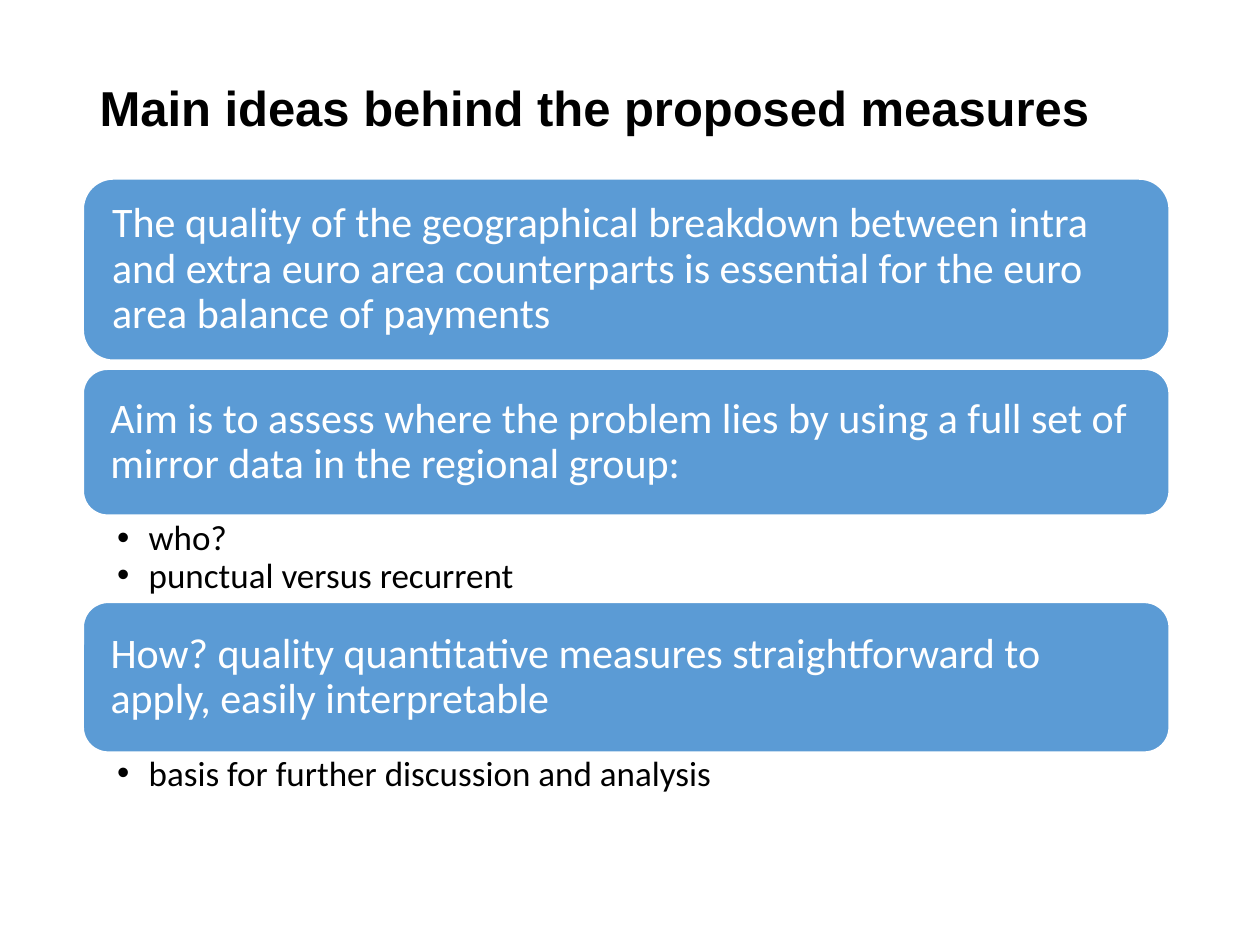
from lxml.etree import SubElement
from pptx import Presentation
from pptx.dml.color import RGBColor
from pptx.enum.shapes import MSO_SHAPE as SHAPE
from pptx.enum.text import MSO_ANCHOR as ANCHOR, MSO_AUTO_SIZE as AUTO, PP_ALIGN as ALIGN
from pptx.oxml.ns import qn
from pptx.util import Inches, Pt

BLUE = RGBColor(0x5B, 0x9B, 0xD5)
WHITE = RGBColor(0xFF, 0xFF, 0xFF)
BLACK = RGBColor(0, 0, 0)
LEFT, WIDTH = 0.66, 8.62


class Deck:
    heading_font = "Arial"
    body_font = "Calibri"

    def __init__(self, prs):
        self.s = prs.slides.add_slide(prs.slide_layouts[3])

    def place(self, sp, left, top, width, height):
        sp.left, sp.top = Inches(left), Inches(top)
        sp.width, sp.height = Inches(width), Inches(height)

    def frame(self, sp, anchor, left, top, right, bottom):
        tf = sp.text_frame
        tf.word_wrap = True
        tf.auto_size = AUTO.NONE
        tf.vertical_anchor = anchor
        tf.margin_left, tf.margin_top = Inches(left), Inches(top)
        tf.margin_right, tf.margin_bottom = Inches(right), Inches(bottom)
        return tf

    def style(self, p, font, size, color, bold=False):
        p.alignment = ALIGN.LEFT
        p.line_spacing = 0.9
        p.space_before = p.space_after = Pt(0)
        for r in p.runs:
            r.font.name, r.font.size = font, Pt(size)
            r.font.bold, r.font.color.rgb = bold, color

    def title(self, text):
        sp = self.s.shapes.title
        self.place(sp, 0.69, 0.4, WIDTH, 0.95)
        tf = self.frame(sp, ANCHOR.MIDDLE, 0.1, 0.05, 0.1, 0.05)
        tf.text = text
        self.style(tf.paragraphs[0], self.heading_font, 28, BLACK, True)

    def banner(self, top, height, text):
        sp = self.s.shapes.add_shape(
            SHAPE.ROUNDED_RECTANGLE, Inches(LEFT), Inches(top), Inches(WIDTH), Inches(height))
        sp.shadow.inherit = False
        sp.fill.solid()
        sp.fill.fore_color.rgb = BLUE
        sp.line.color.rgb = WHITE
        sp.line.width = Pt(1)
        tf = self.frame(sp, ANCHOR.MIDDLE, 0.16, 0.16, 0.16, 0.16)
        tf.text = text
        self.style(tf.paragraphs[0], self.body_font, 24, WHITE)

    def bullets(self, idx, top, height, items):
        sp = self.s.placeholders[idx]
        self.place(sp, LEFT, top, WIDTH, height)
        tf = self.frame(sp, ANCHOR.TOP, 0.27, 0.03, 0.16, 0.03)
        tf.text = "\n".join(items)
        for p in tf.paragraphs:
            pPr = p._p.get_or_add_pPr()
            pPr.set("marL", str(Inches(0.25)))
            pPr.set("indent", str(-Inches(0.25)))
            SubElement(pPr, qn("a:buChar")).set("char", "•")
            self.style(p, self.body_font, 20, BLACK)


def main():
    prs = Presentation()
    prs.slide_width, prs.slide_height = Inches(10), Inches(7.5)
    deck = Deck(prs)
    deck.title("Main ideas behind the proposed measures")
    deck.banner(1.42, 1.44, "The quality of the geographical breakdown between intra and extra "
                            "euro area counterparts is essential for the euro area balance of payments")
    deck.banner(2.93, 1.16, "Aim is to assess where the problem lies by using a full set of "
                            "mirror data in the regional group:")
    deck.bullets(1, 4.1, 0.68, ["who?", "punctual versus recurrent"])
    deck.banner(4.78, 1.19, "How? quality quantitative measures straightforward to apply, "
                            "easily interpretable")
    deck.bullets(2, 5.97, 0.43, ["basis for further discussion and analysis"])
    prs.save("out.pptx")


if __name__ == "__main__":
    main()
